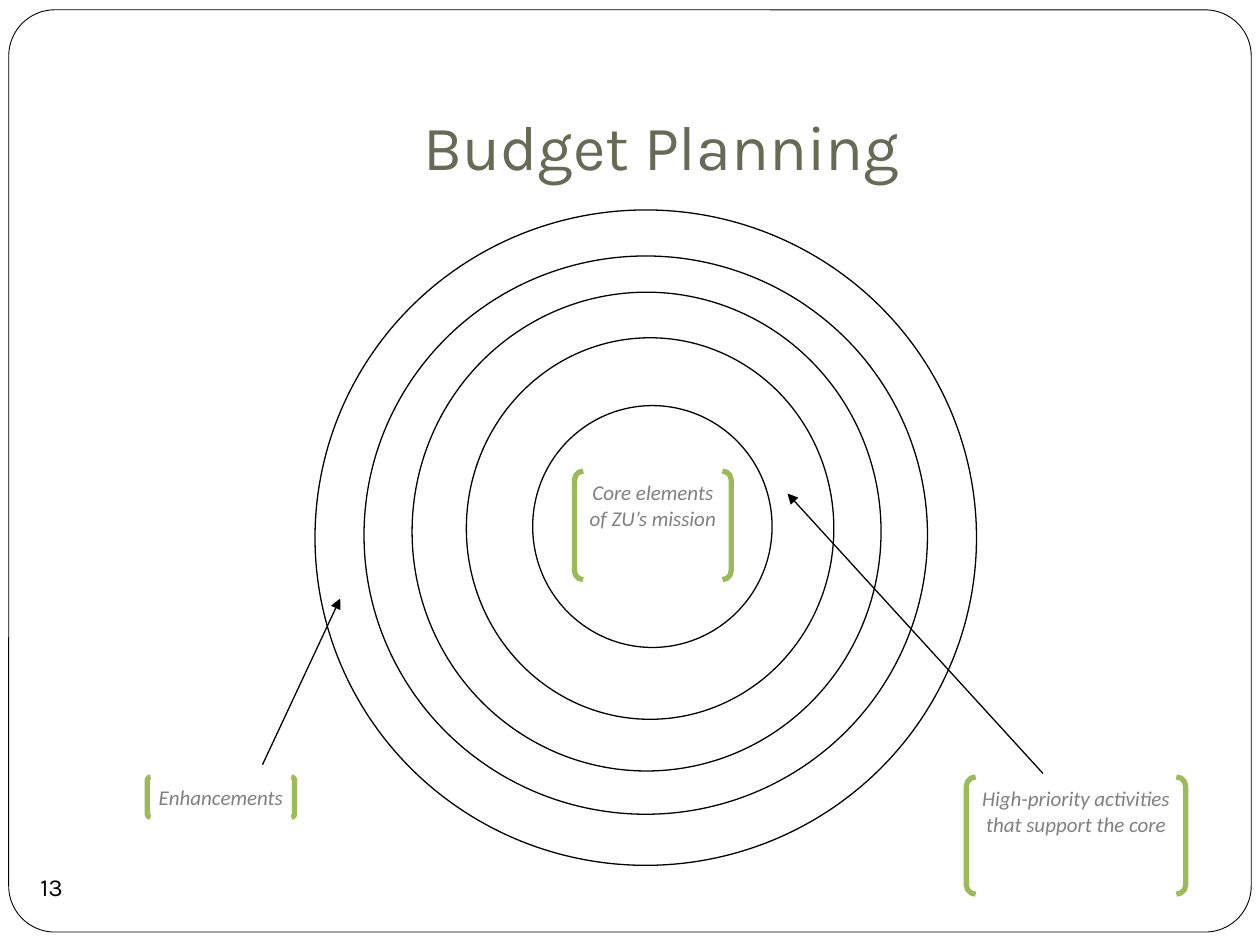
"""Build the Budget Planning slide with its rings, labels and arrows."""
from lxml import etree
from pptx import Presentation
from pptx.dml.color import RGBColor
from pptx.enum import shapes, text
from pptx.oxml import ns
from pptx.util import Pt

HUES = {"ink": "000000", "paper": "FFFFFF", "title": "676A55", "green": "9BBB59", "gray": "808080"}
KINDS = shapes.MSO_SHAPE
TOP, MID, LOW = text.MSO_ANCHOR.TOP, text.MSO_ANCHOR.MIDDLE, text.MSO_ANCHOR.BOTTOM


class Deck:
    """Hold the style and the current slide."""

    def __init__(self, wide, high):
        self.show = Presentation()
        self.show.slide_width, self.show.slide_height = Pt(wide), Pt(high)
        self.page = self.show.slides.add_slide(self.show.slide_layouts[6])

    def tint(self, name):
        return RGBColor.from_string(HUES[name])

    def letter(self, shape, words, hue, font, pad=(0, 0, 0, 0), anchor=TOP, wrap=True):
        frame = shape.text_frame
        sides = ("margin_left", "margin_top", "margin_right", "margin_bottom")
        look = dict(zip(sides, map(Pt, pad)), vertical_anchor=anchor, word_wrap=wrap)
        for key, value in look.items():
            setattr(frame, key, value)
        line = frame.paragraphs[0]
        line.alignment = text.PP_ALIGN.CENTER
        run = line.add_run()
        run.text = words
        for key, value in font.items():
            setattr(run.font, key, value)
        run.font.color.rgb = self.tint(hue)

    def shape(self, kind, box, fill=None, edge=None, width=0.75, curve=None):
        item = self.page.shapes.add_shape(kind, *map(Pt, box))
        item.shadow.inherit = False
        if fill:
            item.fill.solid()
            item.fill.fore_color.rgb = self.tint(fill)
        else:
            item.fill.background()
        if edge:
            item.line.color.rgb = self.tint(edge)
            item.line.width = Pt(width)
        else:
            item.line.fill.background()
        if curve:
            item.adjustments[0] = curve
        return item

    def title(self, words, box):
        item = self.page.shapes.add_textbox(*map(Pt, box))
        font = {"name": "Karla", "size": Pt(36)}
        self.letter(item, words, "title", font, (7.2, 3.6, 7.2, 7.2), LOW)

    def label(self, words, box):
        item = self.shape(KINDS.DOUBLE_BRACKET, box, edge="green", width=3, curve=0.08)
        font = {"name": "Calibri", "size": Pt(12), "italic": True}
        self.letter(item, words, "gray", font, (3.6,) * 4)

    def number(self, words, box):
        item = self.shape(KINDS.OVAL, box)
        font = {"name": "Karla", "size": Pt(14)}
        self.letter(item, words, "ink", font, anchor=MID, wrap=False)

    def arrow(self, *ends):
        item = self.page.shapes.add_connector(shapes.MSO_CONNECTOR.STRAIGHT, *map(Pt, ends))
        item.line.color.rgb = self.tint("ink")
        item.line.width = Pt(0.75)
        props = item.element.spPr
        etree.SubElement(props.find(ns.qn("a:ln")), ns.qn("a:tailEnd"), type="triangle")
        etree.SubElement(props, ns.qn("a:effectLst"))


def main():
    deck = Deck(720, 540)
    deck.shape(KINDS.ROUNDED_RECTANGLE, (5, 5.6, 710, 527), "paper", "ink", 0.5, 0.05)
    deck.title("Budget Planning", (72, 21.6, 612, 90))
    rings = [
        (180, 120, 378, 374.5),
        (208, 146.3, 322, 319),
        (235.5, 167, 268, 273.6),
        (266.5, 193, 210, 218),
        (304.4, 231.8, 136.8, 138.2),
    ]
    for ring in rings:
        deck.shape(KINDS.OVAL, ring, "paper", "ink")
    labels = {
        "Enhancements": (84.2, 444, 84.2, 23),
        "Core elements of ZU’s mission": (328.3, 269.2, 89.5, 62),
        "High-priority activities that support the core": (552.2, 444, 125.4, 67),
    }
    for words, box in labels.items():
        deck.label(words, box)
    deck.arrow(596, 442, 450, 282)
    deck.arrow(150, 437, 194.4, 342)
    deck.number("13", (11.5, 489, 36, 36))
    deck.show.save("out.pptx")


if __name__ == "__main__":
    main()
